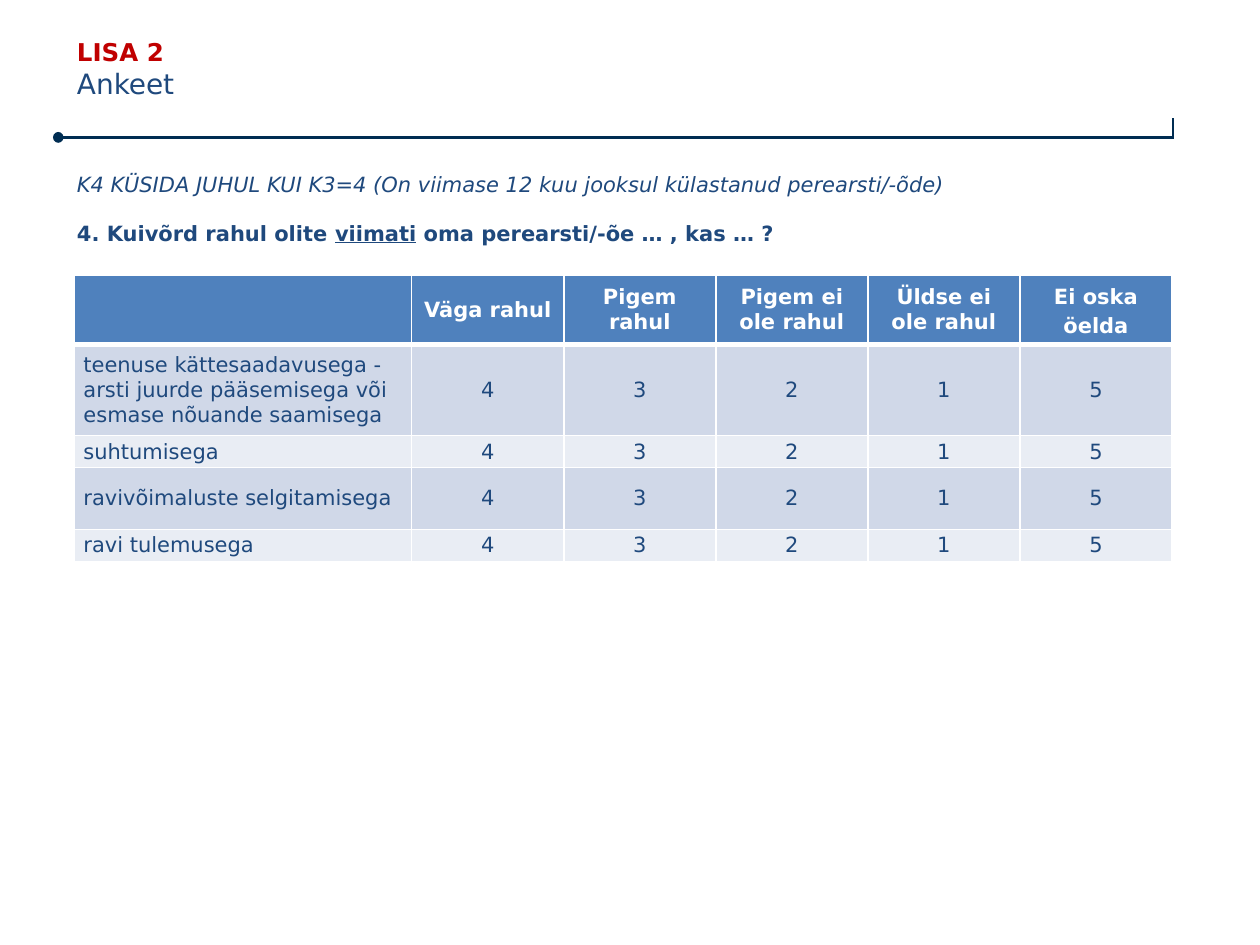
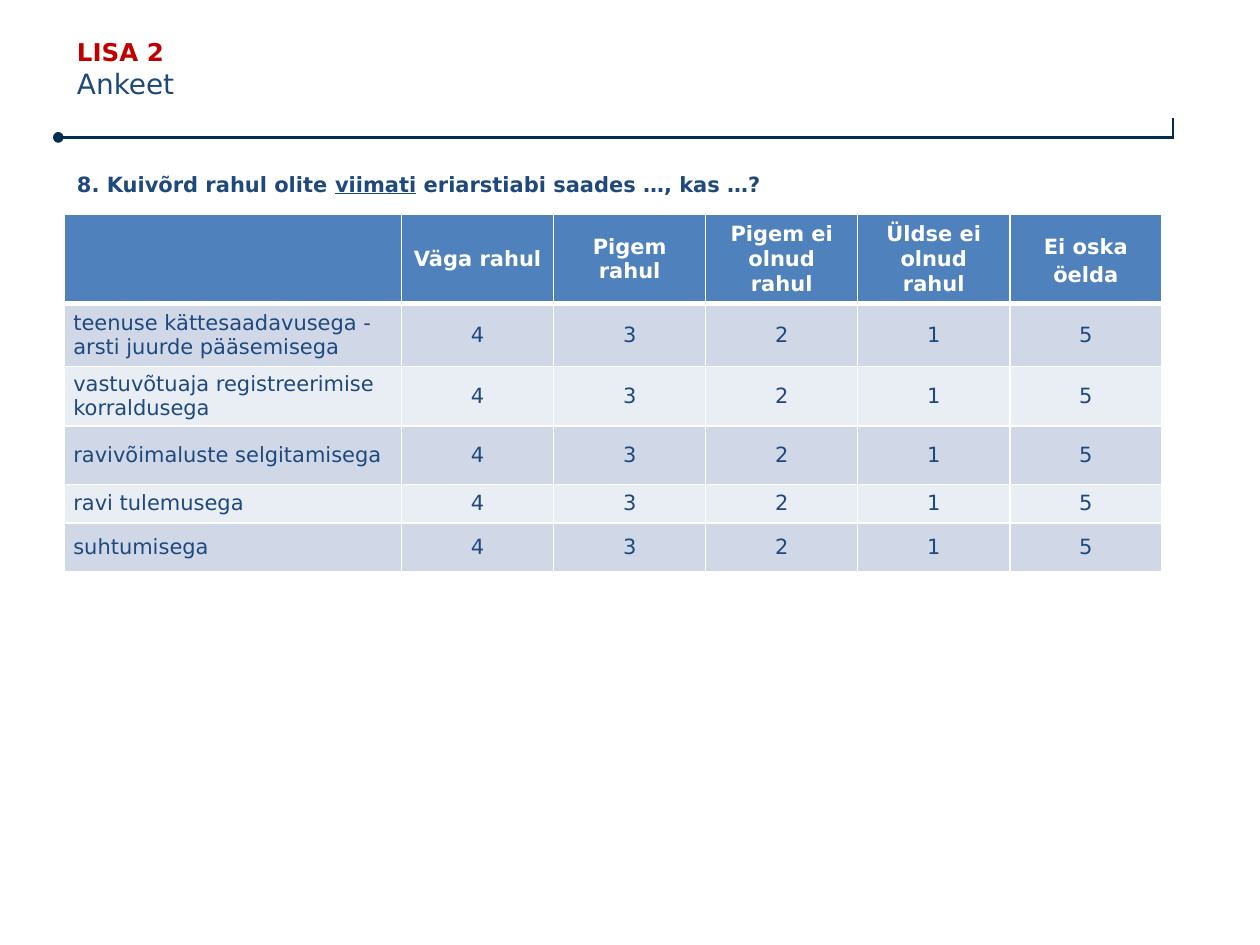
from dataclasses import dataclass

from lxml.etree import SubElement
from pptx import Presentation
from pptx.dml.color import RGBColor
from pptx.enum.shapes import MSO_CONNECTOR, MSO_SHAPE
from pptx.enum.text import MSO_ANCHOR, PP_ALIGN
from pptx.oxml.ns import qn
from pptx.slide import Slide
from pptx.table import _Cell as Cell
from pptx.text.text import TextFrame
from pptx.util import Pt


@dataclass(frozen=True)
class Theme:
    font: str = "DejaVu Sans"
    ink: str = "1F497D"
    accent: str = "C00000"
    rule: str = "002D52"
    white: str = "FFFFFF"
    header: str = "4F81BD"
    bands: tuple[str, str] = ("D0D8E8", "E9EDF4")
    label_size: float = 14
    title_size: float = 16
    body_size: float = 12
    rule_width: float = 1.5
    grid_width: float = 1
    header_edge: float = 3


@dataclass(frozen=True)
class Span:
    text: str
    underline: bool = False


@dataclass(frozen=True)
class RatingRow:
    label: str
    height: float


@dataclass(frozen=True)
class Question:
    spans: tuple[Span, ...]
    text_height: float
    table_left: float
    table_top: float
    header_height: float
    answers: tuple[str, ...]
    rows: tuple[RatingRow, ...]
    condition: str = ""
    hanging: float = 0


THEME = Theme()
SCORES = ("4", "3", "2", "1", "5")
LABEL_WIDTH, SCORE_WIDTH = 192.6, 86.9
TEXT_LEFT = 36.9
RULE_LEFT, RULE_RIGHT, RULE_TOP = 33.6, 670.3, 78.5

QUESTIONS = (
    Question(
        condition="K4 KÜSIDA JUHUL KUI K3=4 (On viimase 12 kuu jooksul külastanud perearsti/-õde)",
        spans=(Span("4. Kuivõrd rahul olite "), Span("viimati", underline=True),
               Span(" oma perearsti/-õe … , kas … ?")),
        text_height=259, table_left=42.7, table_top=157, header_height=40,
        answers=("Väga rahul", "Pigem rahul", "Pigem ei ole rahul",
                 "Üldse ei ole rahul", "Ei oska öelda"),
        rows=(RatingRow("teenuse kättesaadavusega - arsti juurde pääsemisega "
                        "või esmase nõuande saamisega", 52),
              RatingRow("suhtumisega", 18.3),
              RatingRow("ravivõimaluste selgitamisega", 35.4),
              RatingRow("ravi tulemusega", 18.3)),
    ),
    Question(
        spans=(Span("8. Kuivõrd rahul olite "), Span("viimati", underline=True),
               Span(" eriarstiabi saades …, kas …?")),
        text_height=213, table_left=36.9, table_top=122.6, header_height=51,
        answers=("Väga rahul", "Pigem rahul", "Pigem ei olnud rahul",
                 "Üldse ei olnud rahul", "Ei oska öelda"),
        rows=(RatingRow("teenuse kättesaadavusega - arsti juurde pääsemisega", 35.8),
              RatingRow("vastuvõtuaja registreerimise korraldusega", 34.2),
              RatingRow("ravivõimaluste selgitamisega", 33.2),
              RatingRow("ravi tulemusega", 22.2),
              RatingRow("suhtumisega", 28)),
        hanging=18,
    ),
)


def write(frame: TextFrame, *spans: Span, size: float = THEME.body_size,
          color: str = THEME.ink, bold: bool = False, italic: bool = False,
          align: PP_ALIGN = PP_ALIGN.LEFT, before: float = 0,
          line_spacing: float = 1, hanging: float = 0) -> None:
    """Fill the frame's empty first paragraph, or add one after the text."""
    para = frame.add_paragraph() if frame.text else frame.paragraphs[0]
    para.alignment = align
    para.line_spacing = line_spacing
    if before:
        para.space_before = Pt(before)
    if hanging:
        properties = para._p.get_or_add_pPr()
        properties.set("marL", str(Pt(hanging)))
        properties.set("indent", str(-Pt(hanging)))
    for span in spans:
        run = para.add_run()
        run.text = span.text
        font = run.font
        font.name, font.size = THEME.font, Pt(size)
        font.bold, font.italic, font.underline = bold, italic, span.underline
        font.color.rgb = RGBColor.from_string(color)


def add_text_box(slide: Slide, top: float, width: float, height: float,
                 anchor: MSO_ANCHOR = MSO_ANCHOR.TOP) -> TextFrame:
    frame = slide.shapes.add_textbox(Pt(TEXT_LEFT), Pt(top), Pt(width), Pt(height)).text_frame
    frame.word_wrap = True
    frame.vertical_anchor = anchor
    return frame


def add_rule(slide: Slide, x1: float, y1: float, x2: float, y2: float) -> None:
    line = slide.shapes.add_connector(MSO_CONNECTOR.STRAIGHT, Pt(x1), Pt(y1), Pt(x2), Pt(y2))
    line.line.color.rgb = RGBColor.from_string(THEME.rule)
    line.line.width = Pt(THEME.rule_width)
    SubElement(line._element.spPr, qn("a:effectLst"))


def add_header(slide: Slide) -> None:
    add_rule(slide, RULE_RIGHT, 67.7, RULE_RIGHT, 79.2)
    add_rule(slide, RULE_LEFT, RULE_TOP, RULE_RIGHT, RULE_TOP)
    dot = slide.shapes.add_shape(MSO_SHAPE.OVAL, Pt(30.3), Pt(75.4), Pt(6), Pt(6.2))
    dot.shadow.inherit = False
    dot.fill.solid()
    dot.fill.fore_color.rgb = RGBColor.from_string(THEME.rule)
    dot.line.fill.background()
    frame = add_text_box(slide, 9.4, 589.7, 59.8, MSO_ANCHOR.MIDDLE)
    write(frame, Span("LISA 2"), size=THEME.label_size, color=THEME.accent, bold=True)
    write(frame, Span("Ankeet"), size=THEME.title_size)


def style_cell(cell: Cell, fill: str, top: float, bottom: float) -> None:
    """Set margins, white borders (widths in points) and the fill."""
    cell.margin_left = cell.margin_right = Pt(5)
    cell.margin_top = cell.margin_bottom = Pt(0)
    cell.vertical_anchor = MSO_ANCHOR.MIDDLE
    properties = cell._tc.get_or_add_tcPr()
    widths = {"L": THEME.grid_width, "R": THEME.grid_width, "T": top, "B": bottom}
    for side, width in widths.items():
        border = SubElement(properties, qn(f"a:ln{side}"), w=str(Pt(width)))
        SubElement(SubElement(border, qn("a:solidFill")), qn("a:srgbClr"), val=THEME.white)
    cell.fill.solid()
    cell.fill.fore_color.rgb = RGBColor.from_string(fill)


def add_rating_table(slide: Slide, question: Question) -> None:
    heights = [question.header_height, *(row.height for row in question.rows)]
    widths = [LABEL_WIDTH] + [SCORE_WIDTH] * len(SCORES)
    table = slide.shapes.add_table(
        len(heights), len(widths), Pt(question.table_left), Pt(question.table_top),
        Pt(sum(widths)), Pt(sum(heights))).table
    for column, width in zip(table.columns, widths):
        column.width = Pt(width)
    for row, height in zip(table.rows, heights):
        row.height = Pt(height)

    grid, edge = THEME.grid_width, THEME.header_edge
    for column, answer in enumerate(("", *question.answers)):
        cell = table.cell(0, column)
        style_cell(cell, THEME.header, top=grid, bottom=edge)
        if answer:
            spacing = 1.15 if answer == question.answers[-1] else 1
            write(cell.text_frame, Span(answer), color=THEME.white, bold=True,
                  align=PP_ALIGN.CENTER, line_spacing=spacing)
    for index, rating in enumerate(question.rows):
        for column, text in enumerate((rating.label, *SCORES)):
            cell = table.cell(index + 1, column)
            style_cell(cell, THEME.bands[index % 2], top=grid if index else edge, bottom=grid)
            write(cell.text_frame, Span(text),
                  align=PP_ALIGN.CENTER if column else PP_ALIGN.LEFT)


def add_question_slide(deck: Presentation, question: Question) -> None:
    page = deck.slides.add_slide(deck.slide_layouts[6])
    add_header(page)
    frame = add_text_box(page, 94.3, 635, question.text_height)
    if question.condition:
        write(frame, Span(question.condition), italic=True)
    write(frame, *question.spans, bold=True, hanging=question.hanging,
          before=14 if question.condition else 0)
    add_rating_table(page, question)


def main() -> None:
    deck = Presentation()
    deck.slide_width, deck.slide_height = Pt(720), Pt(540)
    for question in QUESTIONS:
        add_question_slide(deck, question)
    deck.save("out.pptx")


if __name__ == "__main__":
    main()
